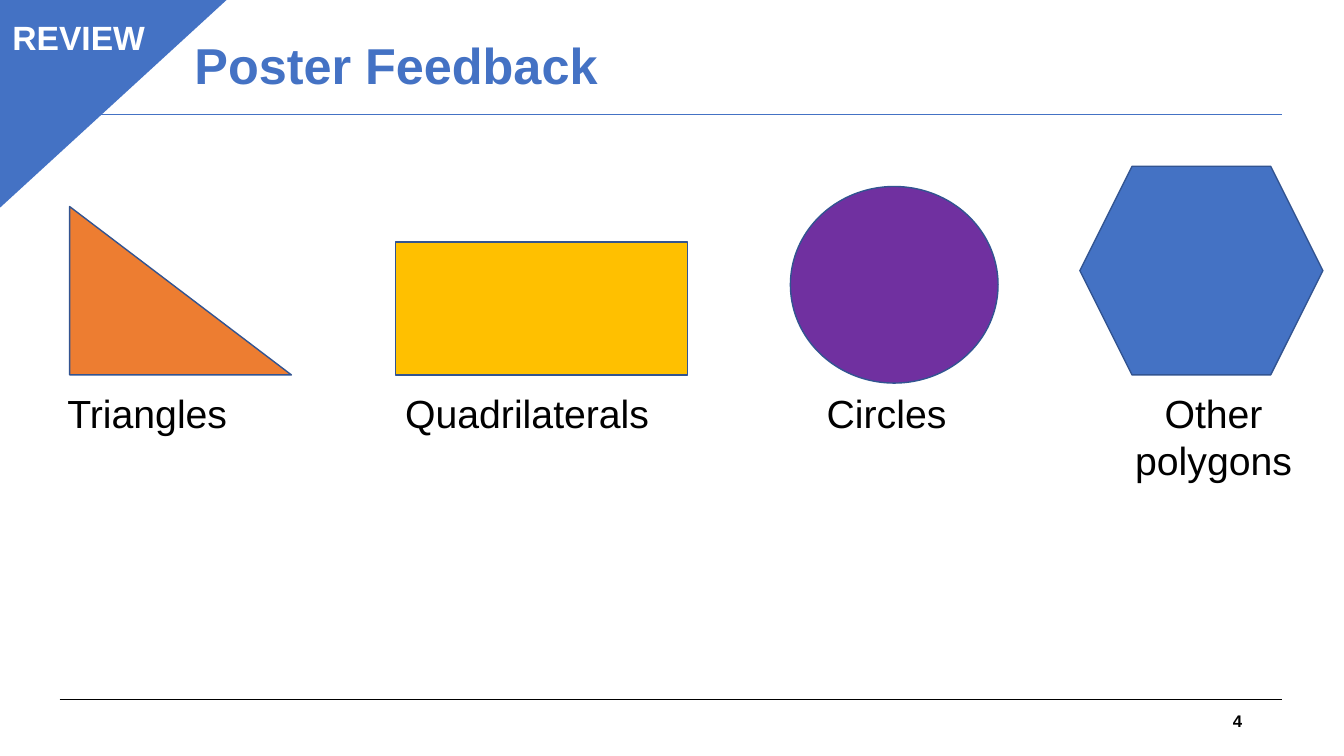
import dataclasses

import pptx
import pptx.dml.color
import pptx.enum.shapes
import pptx.enum.text
import pptx.oxml.ns
import pptx.util
from lxml import etree

SHAPE = pptx.enum.shapes.MSO_SHAPE
ALIGN = pptx.enum.text.PP_ALIGN
ANCHOR = pptx.enum.text.MSO_ANCHOR
SLIDE_WIDTH = pptx.util.Inches(13.33)
SLIDE_HEIGHT = pptx.util.Inches(7.5)
SHAPE_BASELINE = 49.6


@dataclasses.dataclass(frozen=True)
class Theme:
    """Colours, font and type sizes of the slide."""

    font: str = "Arial"
    blue: str = "4472C4"
    outline: str = "325491"
    orange: str = "ED7D31"
    gold: str = "FFC000"
    purple: str = "7030A0"
    black: str = "000000"
    white: str = "FFFFFF"
    title_size: int = 36
    label_size: int = 28
    badge_size: int = 24
    number_size: int = 12


THEME = Theme()


def across(percent):
    """Turn a percentage of the slide width into a length."""
    return round(SLIDE_WIDTH * percent / 100)


def down(percent):
    """Turn a percentage of the slide height into a length."""
    return round(SLIDE_HEIGHT * percent / 100)


def place(left, top, width, height):
    """Turn a box in percentages into slide lengths."""
    return across(left), down(top), across(width), down(height)


def color(value):
    """Return the RGB colour for a hexadecimal value."""
    return pptx.dml.color.RGBColor.from_string(value)


def write_text(shape, text, size, ink=THEME.black, bold=False,
               align=ALIGN.LEFT, anchor=ANCHOR.TOP, spacing=1.0):
    """Write one formatted paragraph into a shape."""
    frame = shape.text_frame
    frame.word_wrap = True
    frame.vertical_anchor = anchor
    paragraph = frame.paragraphs[0]
    paragraph.alignment = align
    paragraph.line_spacing = spacing
    run = paragraph.add_run()
    run.text = text
    run.font.name = THEME.font
    run.font.size = pptx.util.Pt(size)
    run.font.bold = bold
    run.font.color.rgb = color(ink)


def add_text(slide, box, text, size, **text_format):
    """Add a text box with one formatted paragraph."""
    write_text(slide.shapes.add_textbox(*place(*box)), text, size, **text_format)


def add_figure(slide, kind, box, fill, outline=THEME.outline, weight=1):
    """Add a filled and outlined preset shape."""
    shape = slide.shapes.add_shape(kind, *place(*box))
    shape.shadow.inherit = False
    shape.fill.solid()
    shape.fill.fore_color.rgb = color(fill)
    shape.line.color.rgb = color(outline)
    shape.line.width = pptx.util.Pt(weight)
    return shape


def add_rule(slide, row, ink):
    """Add a horizontal rule between the side margins."""
    rule = slide.shapes.add_connector(
        pptx.enum.shapes.MSO_CONNECTOR.STRAIGHT,
        across(4.43), down(row), across(95.42), down(row))
    rule.line.color.rgb = color(ink)
    rule.line.width = pptx.util.Pt(0.75)
    etree.SubElement(rule.element.spPr, pptx.oxml.ns.qn("a:effectLst"))


def add_corner(slide):
    """Add the review banner in the top left corner."""
    corner = add_figure(slide, SHAPE.ISOSCELES_TRIANGLE,
                        (-0.23, -0.27, 17.18, 28), THEME.blue, THEME.blue)
    corner.adjustments[0] = 0
    corner.element.spPr.find(pptx.oxml.ns.qn("a:xfrm")).set("flipV", "1")
    badge = add_figure(slide, SHAPE.RECTANGLE, (0.08, 1.6, 11.55, 6.67),
                       THEME.blue, THEME.blue, 0.75)
    write_text(badge, "REVIEW", THEME.badge_size, ink=THEME.white, bold=True,
               align=ALIGN.CENTER)


def add_polygons(slide):
    """Add the three polygons standing on a common baseline."""
    polygons = (
        (SHAPE.RIGHT_TRIANGLE, 5.18, 16.5, 22.27, THEME.orange),
        (SHAPE.RECTANGLE, 29.41, 21.76, 17.6, THEME.gold),
        (SHAPE.HEXAGON, 80.35, 18.08, 27.6, THEME.blue),
    )
    for kind, left, width, height, fill in polygons:
        add_figure(slide, kind, (left, SHAPE_BASELINE - height, width, height), fill)


def add_labels(slide):
    """Add the name below each shape."""
    labels = (
        ("Triangles", 4.28, 20.63, 7.6, ALIGN.LEFT),
        ("Quadrilaterals", 29.41, 20.63, 7.6, ALIGN.LEFT),
        ("Circles", 60.77, 11.55, 7.6, ALIGN.LEFT),
        ("Other polygons", 83.05, 14.48, 13.87, ALIGN.CENTER),
    )
    for text, left, width, height, align in labels:
        add_text(slide, (left, 50.8, width, height), text, THEME.label_size,
                 align=align)


def main():
    """Build the slide and save it."""
    presentation = pptx.Presentation()
    presentation.slide_width = SLIDE_WIDTH
    presentation.slide_height = SLIDE_HEIGHT
    slide = presentation.slides.add_slide(presentation.slide_layouts[6])
    add_rule(slide, 92.53, THEME.black)
    add_rule(slide, 15.2, THEME.blue)
    add_text(slide, (13.73, 1.6, 75.02, 14.8), "Poster Feedback", THEME.title_size,
             ink=THEME.blue, bold=True, anchor=ANCHOR.MIDDLE, spacing=0.9)
    add_text(slide, (70.67, 92.67, 22.5, 5.33), "4", THEME.number_size,
             bold=True, align=ALIGN.RIGHT, anchor=ANCHOR.MIDDLE)
    add_corner(slide)
    add_polygons(slide)
    add_figure(slide, SHAPE.OVAL, (58.81, 24.67, 15.45, 26), THEME.purple)
    add_labels(slide)
    presentation.save("out.pptx")


if __name__ == "__main__":
    main()
